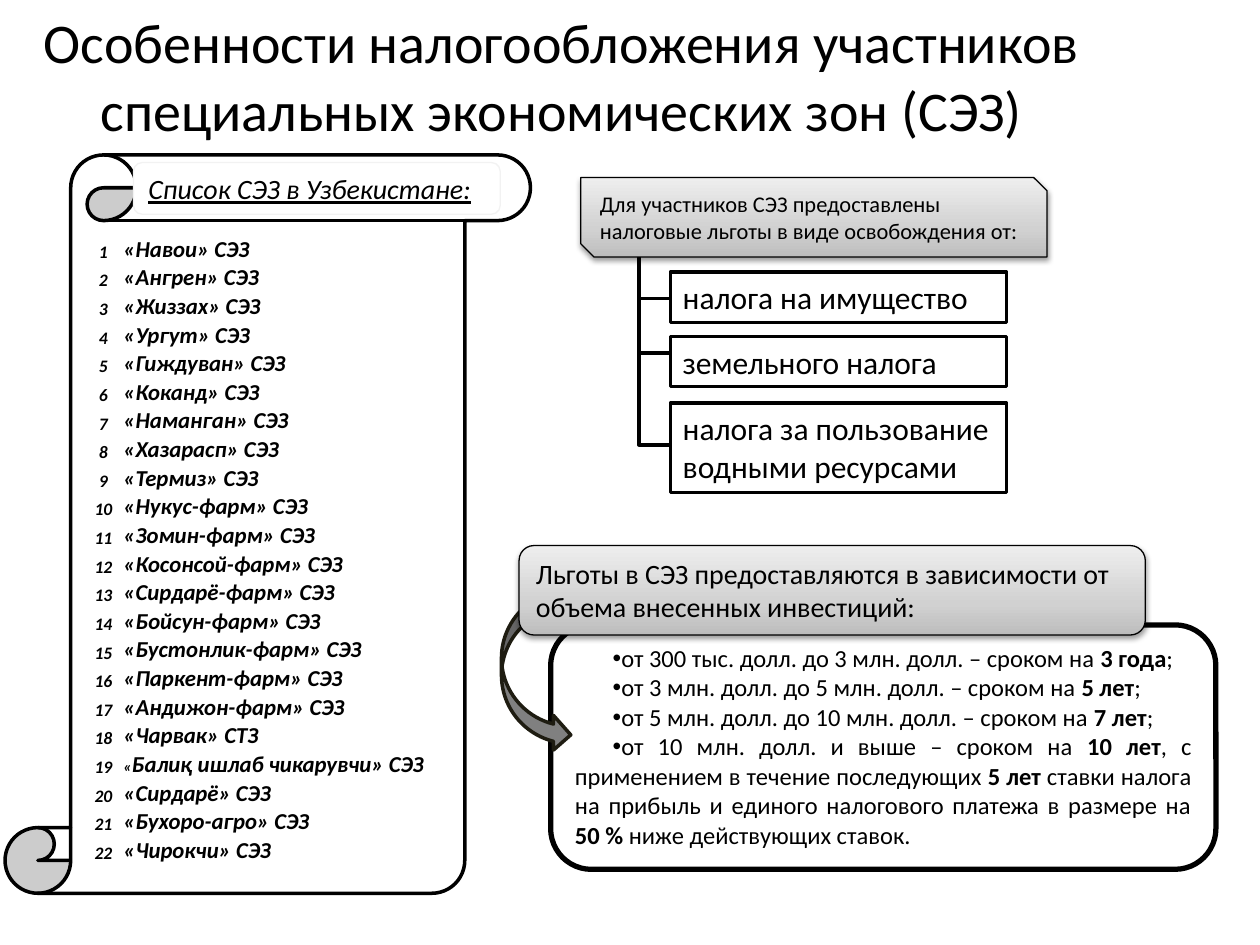
from copy import deepcopy

from lxml.etree import SubElement
from pptx import Presentation
from pptx.dml.color import RGBColor
from pptx.enum.shapes import MSO_SHAPE
from pptx.enum.text import MSO_ANCHOR, PP_ALIGN
from pptx.oxml.ns import qn
from pptx.util import Inches, Pt

BLACK, WHITE = "000000", "FFFFFF"
GRADIENT = ["BDBDBD", "D1D1D1", "EEEEEE"]
ZONES = [
    "«Навои» СЭЗ", "«Ангрен» СЭЗ", "«Жиззах» СЭЗ", "«Ургут» СЭЗ",
    "«Гиждуван» СЭЗ", "«Коканд» СЭЗ", "«Наманган» СЭЗ", "«Хазарасп» СЭЗ",
    "«Термиз» СЭЗ", "«Нукус-фарм» СЭЗ", "«Зомин-фарм» СЭЗ",
    "«Косонсой-фарм» СЭЗ", "«Сирдарё-фарм» СЭЗ", "«Бойсун-фарм» СЭЗ",
    "«Бустонлик-фарм» СЭЗ", "«Паркент-фарм» СЭЗ", "«Андижон-фарм» СЭЗ",
    "«Чарвак» СТЗ", "«Балиқ ишлаб чикарувчи» СЭЗ", "«Сирдарё» СЭЗ",
    "«Бухоро-агро» СЭЗ", "«Чирокчи» СЭЗ",
]
SMALL_QUOTE_ROW = 19
TAXES = [
    ("налога на имущество", 2.16, 0.4, 2.37),
    ("земельного налога", 2.67, 0.4, 2.8),
    ("налога за пользование водными ресурсами", 3.2, 0.71, 3.53),
]
TERMS = [
    ["от 300 тыс. долл. до 3 млн. долл. – сроком на ", "3 года", ";"],
    ["от 3 млн. долл. до 5 млн. долл. – сроком на ", "5 лет", ";"],
    ["от 5 млн. долл. до 10 млн. долл. – сроком на ", "7 лет", ";"],
    ["от 10 млн. долл. и выше – сроком на ", "10 лет",
     ", с применением в течение последующих ", "5 лет",
     " ставки налога на прибыль и единого налогового платежа в размере на ",
     "50 %", " ниже действующих ставок."],
]


def color(value):
    return RGBColor.from_string(value)


def apply(target, values):
    for name, value in values.items():
        setattr(target, name, value)


def write(paragraph, text, size, **style):
    run = paragraph.add_run()
    run.text = text
    apply(run.font, {"name": "Calibri", "size": Pt(size), **style})
    run.font.color.rgb = color(BLACK)


def add_panel(slide, kind, box, fill=WHITE, line=BLACK, width=2):
    panel = slide.shapes.add_shape(kind, *map(Inches, box))
    panel.shadow.inherit = False
    panel.fill.solid()
    panel.fill.fore_color.rgb = color(fill)
    panel.line.color.rgb = color(line)
    panel.line.width = Pt(width)
    apply(panel.text_frame, {"word_wrap": True, "vertical_anchor": MSO_ANCHOR.TOP})
    panel.text_frame.paragraphs[0].alignment = PP_ALIGN.LEFT
    return panel


def add_banner(slide, kind, box, text, size):
    banner = add_panel(slide, kind, box, width=0.75)
    banner.fill.gradient()
    banner.fill.gradient_angle = 90
    properties = banner._element.spPr
    stops = properties.find(".//" + qn("a:gsLst"))
    middle = deepcopy(stops[0])
    middle.set("pos", "35000")
    stops.insert(1, middle)
    for stop, value in zip(banner.fill.gradient_stops, GRADIENT):
        stop.color.rgb = color(value)
    shadow = SubElement(properties.find(qn("a:effectLst")), qn("a:outerShdw"),
                        blurRad=str(Pt(3.1)), dist=str(Pt(1.6)), dir="5400000", rotWithShape="0")
    shade = SubElement(shadow, qn("a:srgbClr"), val=BLACK)
    SubElement(shade, qn("a:alpha"), val="38000")
    write(banner.text_frame.paragraphs[0], text, size)
    return banner


def add_title(slide, box):
    title = slide.shapes.add_textbox(*map(Inches, box)).text_frame
    apply(title, {"word_wrap": True, "vertical_anchor": MSO_ANCHOR.MIDDLE})
    title.paragraphs[0].alignment = PP_ALIGN.CENTER
    write(title.paragraphs[0],
          "Особенности налогообложения участников специальных экономических зон (СЭЗ)", 32)


def add_zone_scroll(slide, box):
    left, top, _, _ = box
    add_panel(slide, MSO_SHAPE.VERTICAL_SCROLL, box)
    table = slide.shapes.add_table(
        len(ZONES), 2, Inches(left + 0.63), Inches(top + 0.63),
        Inches(2.84), Inches(0.22 * len(ZONES))).table
    apply(table, {"first_row": False, "horz_banding": False})
    for column, width in zip(table.columns, (0.3, 2.54)):
        column.width = Inches(width)
    cell_format = {"margin_left": Inches(0.01), "margin_right": Inches(0.01),
                   "margin_top": Inches(0.01), "margin_bottom": 0}
    for number, zone in enumerate(ZONES, 1):
        quote_size = 9 if number == SMALL_QUOTE_ROW else 13
        parts = [(zone[0], quote_size), (zone[1:], 13)] if quote_size == 9 else [(zone, 13)]
        columns = [([(str(number), 10)], PP_ALIGN.CENTER, MSO_ANCHOR.BOTTOM),
                   (parts, PP_ALIGN.JUSTIFY, MSO_ANCHOR.MIDDLE)]
        for cell, (texts, alignment, anchor) in zip(table.rows[number - 1].cells, columns):
            apply(cell, {**cell_format, "vertical_anchor": anchor})
            cell.fill.solid()
            cell.fill.fore_color.rgb = color(WHITE)
            paragraph = cell.text_frame.paragraphs[0]
            paragraph.alignment = alignment
            for text, size in texts:
                write(paragraph, text, size, bold=True, italic=True)
    heading = add_panel(slide, MSO_SHAPE.ROUNDED_RECTANGLE,
                        (left + 1.02, top + 0.06, 2.91, 0.41), line="F2F2F2", width=0.75)
    paragraph = heading.text_frame.paragraphs[0]
    paragraph.alignment = PP_ALIGN.JUSTIFY
    write(paragraph, "Список СЭЗ в Узбекистане:", 16, italic=True, underline=True)


def add_exemptions(slide, box):
    left, top, width, _ = box
    trunk, branch = left + 0.46, left + 0.71
    for _, _, _, joint in TAXES:
        path = slide.shapes.build_freeform(Inches(trunk), Inches(joint - 0.95))
        path.add_line_segments(
            [(Inches(trunk), Inches(joint)), (Inches(branch), Inches(joint))], close=False)
        bracket = path.convert_to_shape()
        bracket.shadow.inherit = False
        bracket.fill.background()
        bracket.line.color.rgb = color(BLACK)
        bracket.line.width = Pt(2)
    header = add_banner(slide, MSO_SHAPE.SNIP_2_DIAG_RECTANGLE, (left, top, width, 0.63),
                        "Для участников СЭЗ предоставлены налоговые льготы в виде освобождения от:",
                        12.8)
    header.text_frame.paragraphs[0].space_before = Pt(2.5)
    for tax, tax_top, height, _ in TAXES:
        tax_box = add_panel(slide, MSO_SHAPE.RECTANGLE, (branch, tax_top, 2.67, height))
        write(tax_box.text_frame.paragraphs[0], tax, 18)


def add_investment_terms(slide, box):
    left, top, _, _ = box
    terms = add_panel(slide, MSO_SHAPE.ROUNDED_RECTANGLE,
                      (left + 0.25, top + 0.63, 5.28, 1.94), width=3).text_frame
    for index, parts in enumerate(TERMS):
        paragraph = terms.add_paragraph() if index else terms.paragraphs[0]
        paragraph.alignment = PP_ALIGN.JUSTIFY
        properties = paragraph._p.get_or_add_pPr()
        properties.set("marL", "0")
        properties.set("indent", str(Inches(0.3)))
        SubElement(properties, qn("a:buFont"), typeface="Arial")
        SubElement(properties, qn("a:buChar"), char="•")
        for position, text in enumerate(parts):
            write(paragraph, text, 14, bold=position % 2 == 1)
    arrow = add_panel(slide, MSO_SHAPE.CURVED_UP_ARROW,
                      (left - 0.51, top + 0.72, 1.29, 0.55), "808080", "1E1C11")
    arrow.rotation = 90
    add_banner(slide, MSO_SHAPE.ROUNDED_RECTANGLE, (left, top, 4.97, 0.71),
               "Льготы в СЭЗ предоставляются в зависимости от объема внесенных инвестиций:", 16)


def main():
    deck = Presentation()
    apply(deck, {"slide_width": Inches(10), "slide_height": Inches(7.5)})
    slide = deck.slides.add_slide(deck.slide_layouts[6])
    add_title(slide, (-0.04, -0.03, 9, 1.25))
    add_zone_scroll(slide, (0.04, 1.23, 4.17, 5.86))
    add_exemptions(slide, (4.61, 1.41, 3.7, 2.5))
    add_investment_terms(slide, (4.12, 4.33, 5.53, 2.57))
    deck.save("out.pptx")


if __name__ == "__main__":
    main()
